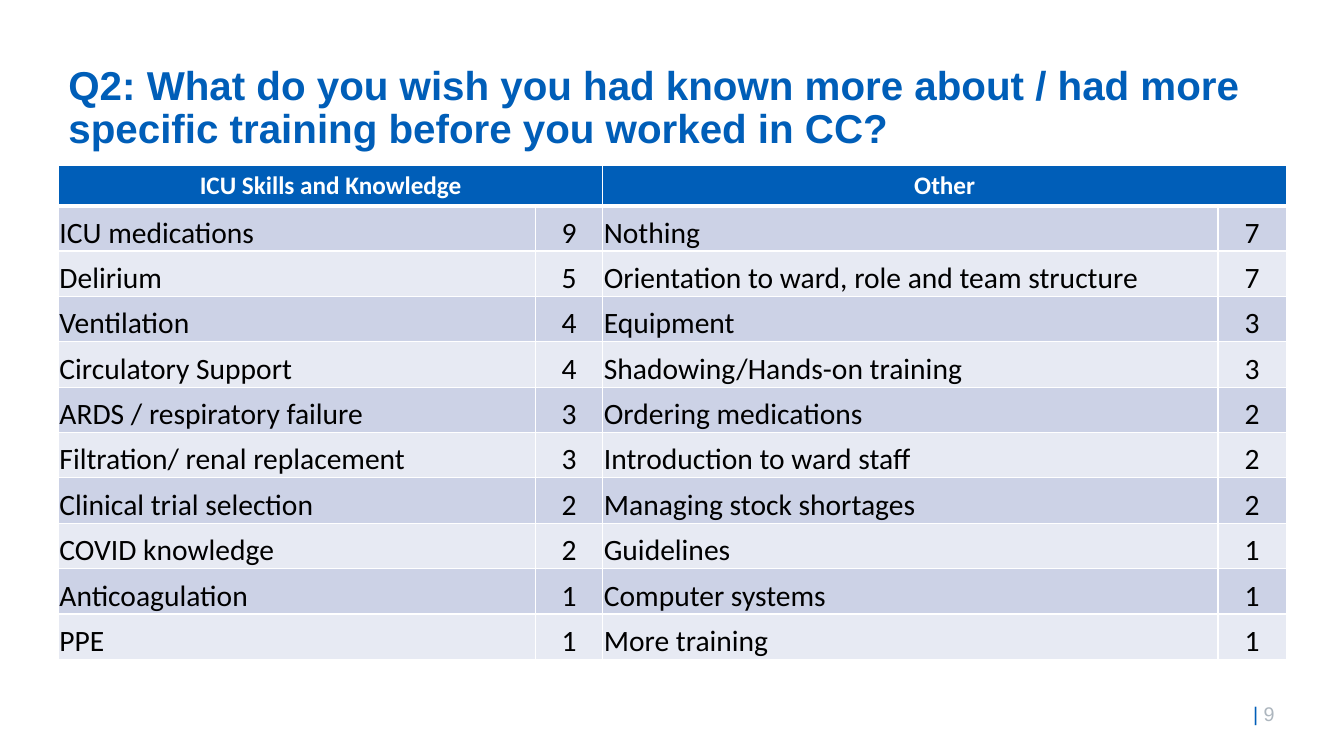
import pptx
import pptx.dml.color
import pptx.enum.text
import pptx.oxml.ns
import pptx.util
from dataclasses import dataclass
from lxml import etree

Inches = pptx.util.Inches
Pt = pptx.util.Pt
Align = pptx.enum.text.PP_ALIGN
Anchor = pptx.enum.text.MSO_ANCHOR


@dataclass(frozen=True)
class Theme:
    blue: str = "005EB8"
    grey: str = "ADB6BE"
    black: str = "000000"
    white: str = "FFFFFF"
    bands: tuple = ("CCD2E6", "E7EAF3")
    heading_font: str = "Arial"
    table_font: str = "Calibri"
    title_size: float = 28.8
    header_size: float = 18
    body_size: float = 21.1
    number_size: float = 14.1


class SlideBuilder:
    def __init__(self, slide, theme):
        self.slide = slide
        self.theme = theme

    def add_span(self, para, text, font, size, color, bold=False):
        span = para.add_run()
        span.text = text
        span.font.name = font
        span.font.size = Pt(size)
        span.font.bold = bold
        span.font.color.rgb = pptx.dml.color.RGBColor.from_string(color)

    def add_text(self, left, top, width, height, spans, size, bold=False,
                 anchor=Anchor.TOP, line_spacing=None):
        """Add a text box from (text, color) pairs in the heading font."""
        box = self.slide.shapes.add_textbox(
            Inches(left), Inches(top), Inches(width), Inches(height))
        frame = box.text_frame
        frame.word_wrap = True
        frame.vertical_anchor = anchor
        para = frame.paragraphs[0]
        para.line_spacing = line_spacing
        for text, color in spans:
            self.add_span(para, text, self.theme.heading_font, size, color, bold)
        return box

    def set_borders(self, cell, top=1, bottom=1):
        """Draw white cell borders; widths are in points."""
        properties = cell._tc.get_or_add_tcPr()
        for side, width in (("L", 1), ("R", 1), ("T", top), ("B", bottom)):
            line = etree.SubElement(
                properties, pptx.oxml.ns.qn(f"a:ln{side}"), w=str(Pt(width)))
            fill = etree.SubElement(line, pptx.oxml.ns.qn("a:solidFill"))
            etree.SubElement(
                fill, pptx.oxml.ns.qn("a:srgbClr"), val=self.theme.white)

    def fill_cell(self, cell, color):
        cell.fill.solid()
        cell.fill.fore_color.rgb = pptx.dml.color.RGBColor.from_string(color)

    def add_table(self, left, top, widths, header_height, row_height, headers, rows):
        """Add a banded table whose headers each span a label and a count column."""
        theme = self.theme
        table = self.slide.shapes.add_table(
            len(rows) + 1, len(widths), Inches(left), Inches(top),
            Inches(sum(widths)),
            Inches(header_height + row_height * len(rows))).table
        table.horz_banding = False
        for column, width in zip(table.columns, widths):
            column.width = Inches(width)
        for index, row in enumerate(table.rows):
            row.height = Inches(row_height if index else header_height)

        for column in range(len(widths)):
            cell = table.cell(0, column)
            self.set_borders(cell, bottom=3)
            self.fill_cell(cell, theme.blue)
        for index, header in enumerate(headers):
            cell = table.cell(0, 2 * index)
            cell.merge(table.cell(0, 2 * index + 1))
            para = cell.text_frame.paragraphs[0]
            para.alignment = Align.CENTER
            self.add_span(para, header, theme.table_font, theme.header_size,
                          theme.white, True)

        for index, values in enumerate(rows):
            for column, value in enumerate(values):
                cell = table.cell(index + 1, column)
                self.set_borders(cell, top=1 if index else 3)
                self.fill_cell(cell, theme.bands[index % 2])
                cell.vertical_anchor = Anchor.BOTTOM
                cell.margin_left = cell.margin_right = cell.margin_top = Inches(0.01)
                cell.margin_bottom = 0
                para = cell.text_frame.paragraphs[0]
                para.alignment = Align.CENTER if column % 2 else Align.LEFT
                self.add_span(para, str(value), theme.table_font,
                              theme.body_size, theme.black)


ANSWERS = [
    ("ICU medications", 9, "Nothing", 7),
    ("Delirium", 5, "Orientation to ward, role and team structure", 7),
    ("Ventilation", 4, "Equipment", 3),
    ("Circulatory Support", 4, "Shadowing/Hands-on training", 3),
    ("ARDS / respiratory failure", 3, "Ordering medications", 2),
    ("Filtration/ renal replacement", 3, "Introduction to ward staff", 2),
    ("Clinical trial selection", 2, "Managing stock shortages", 2),
    ("COVID knowledge", 2, "Guidelines", 1),
    ("Anticoagulation", 1, "Computer systems", 1),
    ("PPE", 1, "More training", 1),
]


def main():
    deck = pptx.Presentation()
    deck.slide_width = Inches(13.33)
    deck.slide_height = Inches(7.5)
    theme = Theme()
    page = SlideBuilder(deck.slides.add_slide(deck.slide_layouts[6]), theme)

    page.add_text(12.33, 6.91, 0.94, 0.34,
                  [("| ", theme.blue), ("9", theme.grey)],
                  theme.number_size, anchor=Anchor.MIDDLE)
    title = ("Q2: What do you wish you had known more about / had more "
             "specific training before you worked in CC?")
    page.add_text(0.58, 0.6, 12.18, 0.67, [(title, theme.blue)],
                  theme.title_size, bold=True, line_spacing=0.9)
    page.add_table(0.58, 1.64, (4.73, 0.67, 6.1, 0.68), 0.38, 0.45,
                   ("ICU Skills and Knowledge", "Other"), ANSWERS)
    deck.save("out.pptx")


if __name__ == "__main__":
    main()
